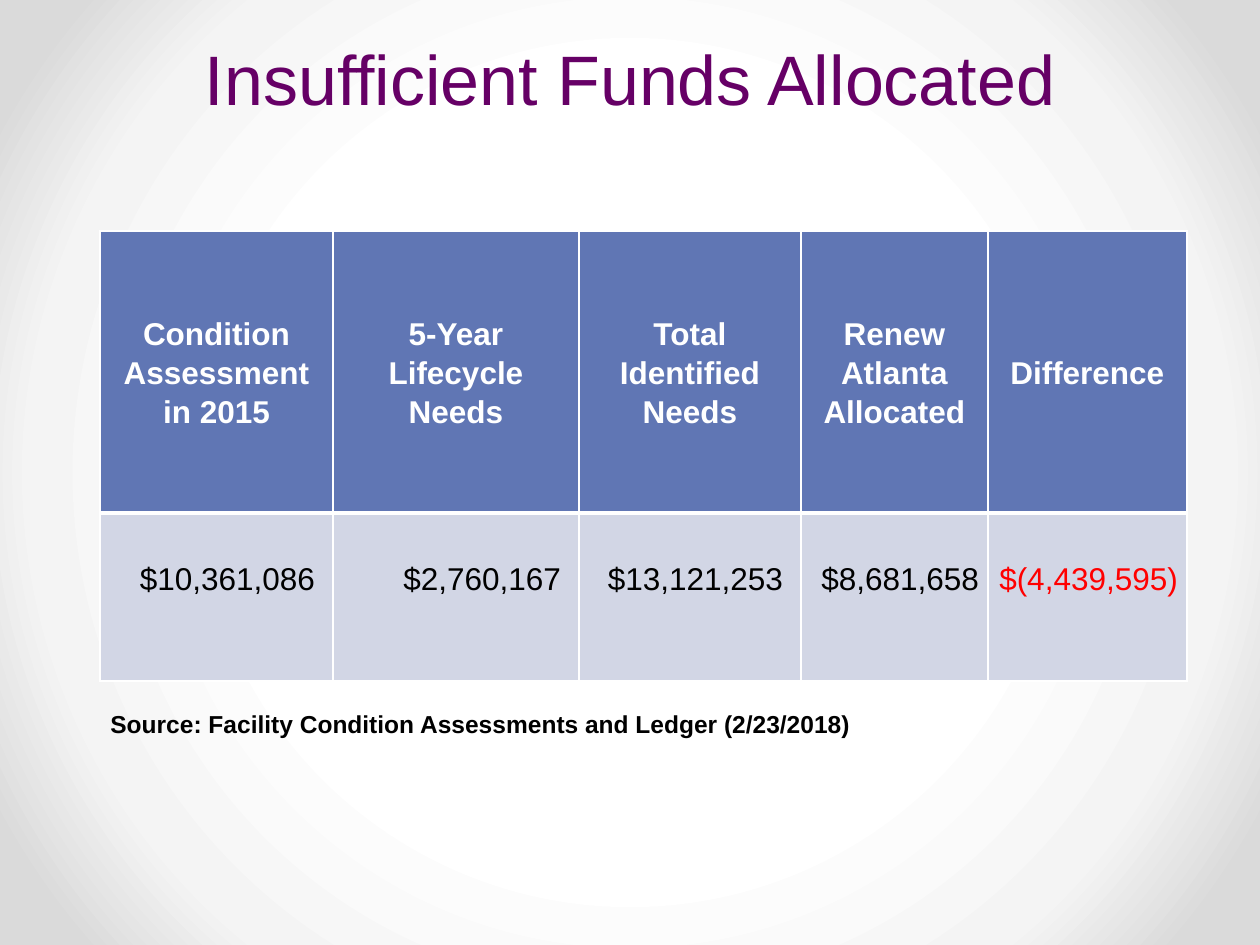
from dataclasses import dataclass

from pptx import Presentation
from pptx.dml.color import RGBColor
from pptx.enum.text import MSO_ANCHOR, MSO_AUTO_SIZE, PP_ALIGN
from pptx.oxml import parse_xml
from pptx.oxml.ns import nsdecls, qn
from pptx.util import Emu, Pt

LEFT, CENTER, RIGHT = PP_ALIGN.LEFT, PP_ALIGN.CENTER, PP_ALIGN.RIGHT
TOP, MIDDLE, BOTTOM = MSO_ANCHOR.TOP, MSO_ANCHOR.MIDDLE, MSO_ANCHOR.BOTTOM
FIT_SHAPE = MSO_AUTO_SIZE.SHAPE_TO_FIT_TEXT
EMU_PER_PX = 914400 // 126


@dataclass(frozen=True)
class Theme:
    font: str = "Arial"
    title: str = "660066"
    ink: str = "000000"
    negative: str = "FF0000"
    white: str = "FFFFFF"
    header_fill: str = "6076B4"
    body_fill: str = "D2D6E5"
    backdrop: tuple = ((50, "FFFFFF"), (76, "F4F4F4"), (92, "DADADA"))
    title_size: int = 40
    table_size: int = 18
    source_size: int = 14
    thin_line: int = 1
    thick_line: int = 3


@dataclass(frozen=True)
class Column:
    heading: str
    amount: str
    width: int
    right_inset: int
    color: str


THEME = Theme()
INSET = 9
AMOUNT_TOP_INSET = 45
HEADER_HEIGHT, BODY_HEIGHT = 282, 168
COLUMNS = (
    Column("Condition Assessment in 2015", "$10,361,086", 233, 18, THEME.ink),
    Column("5-Year Lifecycle Needs", "$2,760,167", 246, 18, THEME.ink),
    Column("Total Identified Needs", "$13,121,253", 222, 18, THEME.ink),
    Column("Renew Atlanta Allocated", "$8,681,658", 187, INSET, THEME.ink),
    Column("Difference", "$(4,439,595)", 199, INSET, THEME.negative),
)


def px(length: int) -> Emu:
    return Emu(length * EMU_PER_PX)


def write(frame, text: str, *, size: int, color: str, bold: bool = False,
          align=LEFT, spacing=None) -> None:
    """Put one formatted paragraph in a text frame."""
    para = frame.paragraphs[0]
    para.alignment = align
    if spacing is not None:
        para.line_spacing = spacing
    span = para.add_run()
    span.text = text
    span.font.name = THEME.font
    span.font.size = Pt(size)
    span.font.bold = bold
    span.font.color.rgb = RGBColor.from_string(color)


def add_text(slide, text: str, left: int, top: int, width: int, height: int,
             *, anchor=TOP, auto_size=None, **text_format) -> None:
    box = slide.shapes.add_textbox(px(left), px(top), px(width), px(height))
    frame = box.text_frame
    frame.word_wrap = True
    frame.vertical_anchor = anchor
    if auto_size is not None:
        frame.auto_size = auto_size
    write(frame, text, **text_format)


def set_backdrop(slide) -> None:
    """Fill the background with a circular gradient."""
    stops = "".join(
        f'<a:gs pos="{percent * 1000}"><a:srgbClr val="{color}"/></a:gs>'
        for percent, color in THEME.backdrop)
    backdrop = parse_xml(
        f'<p:bg {nsdecls("p", "a")}><p:bgPr><a:gradFill rotWithShape="1">'
        f'<a:gsLst>{stops}</a:gsLst><a:path path="circle">'
        '<a:fillToRect l="50000" t="50000" r="50000" b="50000"/></a:path>'
        '</a:gradFill><a:effectLst/></p:bgPr></p:bg>')
    slide.element.find(qn("p:cSld")).insert(0, backdrop)


def set_borders(cell, **widths: int) -> None:
    """Draw white cell borders; keywords L, R, T and B override the width."""
    properties = cell._tc.get_or_add_tcPr()
    for position, side in enumerate("LRTB"):
        width = Pt(widths.get(side, THEME.thin_line))
        properties.insert(position, parse_xml(
            f'<a:ln{side} {nsdecls("a")} w="{width}"><a:solidFill>'
            f'<a:srgbClr val="{THEME.white}"/></a:solidFill></a:ln{side}>'))


def fill_cell(cell, text: str, *, fill: str, anchor, top_inset: int = 0,
              right_inset: int = INSET, **text_format) -> None:
    cell.fill.solid()
    cell.fill.fore_color.rgb = RGBColor.from_string(fill)
    cell.vertical_anchor = anchor
    cell.margin_left, cell.margin_right = px(INSET), px(right_inset)
    cell.margin_top, cell.margin_bottom = px(top_inset), px(0)
    write(cell.text_frame, text, size=THEME.table_size, spacing=1.1, **text_format)


def add_funding_table(slide, left: int, top: int) -> None:
    width = sum(column.width for column in COLUMNS)
    table = slide.shapes.add_table(
        2, len(COLUMNS), px(left), px(top), px(width),
        px(HEADER_HEIGHT + BODY_HEIGHT)).table
    table.horz_banding = False
    table.rows[0].height, table.rows[1].height = px(HEADER_HEIGHT), px(BODY_HEIGHT)
    for index, column in enumerate(COLUMNS):
        table.columns[index].width = px(column.width)
        header, body = table.cell(0, index), table.cell(1, index)
        fill_cell(header, column.heading, fill=THEME.header_fill, anchor=MIDDLE,
                  color=THEME.white, bold=True, align=CENTER)
        fill_cell(body, column.amount, fill=THEME.body_fill, anchor=TOP,
                  top_inset=AMOUNT_TOP_INSET, right_inset=column.right_inset,
                  color=column.color, align=RIGHT)
        set_borders(header, B=THEME.thick_line)
        set_borders(body, T=THEME.thick_line)


def main() -> None:
    deck = Presentation()
    deck.slide_width, deck.slide_height = px(1260), px(945)
    page = deck.slides.add_slide(deck.slide_layouts[6])
    set_backdrop(page)

    # Title
    add_text(page, "Insufficient Funds Allocated", 147, 10, 966, 116,
             anchor=BOTTOM, size=THEME.title_size, color=THEME.title,
             align=CENTER, spacing=Pt(58))

    # Needs compared with allocated funds
    add_funding_table(page, 100, 231)

    # Source line
    add_text(page, "Source: Facility Condition Assessments and Ledger (2/23/2018)",
             98, 703, 794, 43, auto_size=FIT_SHAPE, size=THEME.source_size,
             color=THEME.ink, bold=True)

    deck.save("out.pptx")


if __name__ == "__main__":
    main()
